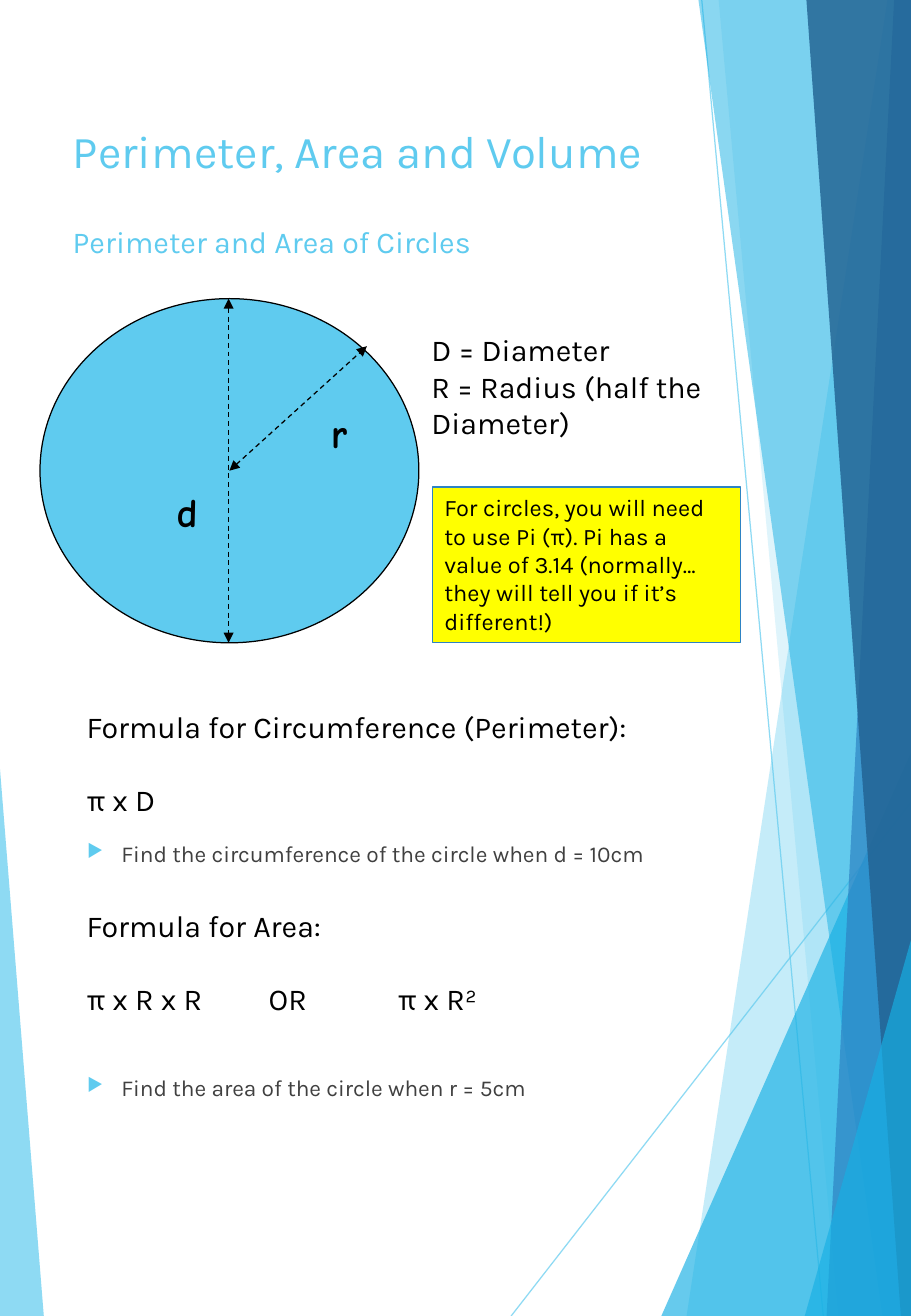
from dataclasses import dataclass

from lxml import etree
from pptx import Presentation
from pptx.dml.color import RGBColor
from pptx.enum import dml, shapes, text
from pptx.oxml.ns import qn
from pptx.util import Pt

WIDTH, HEIGHT = 540, 780
SKY = RGBColor(0x5F, 0xCB, 0xEF)
CYAN = RGBColor(0x17, 0xB0, 0xE4)
BLUE = RGBColor(0x2E, 0x83, 0xC3)
NAVY = RGBColor(0x22, 0x62, 0x92)
YELLOW = RGBColor(0xFF, 0xFF, 0x00)
BLACK = RGBColor(0x00, 0x00, 0x00)
GREY = RGBColor(0x40, 0x40, 0x40)
KARLA, COMIC = "Karla", "Comic Neue"
LINE_WIDTH = 0.75
BLANK_LINE = 21.6
BULLET_INDENT = 20.25

Point = tuple[float, float]
Box = tuple[float, float, float, float]


@dataclass
class Facet:
    points: list[Point]
    color: RGBColor
    opacity: int


@dataclass
class Label:
    box: Box
    lines: list[str]
    size: float = 18
    color: RGBColor = BLACK
    font: str = KARLA
    bold: bool = False
    centred: bool = False
    bullet: bool = False
    gap: float = 0
    tabs: tuple[float, ...] = ()


def band(top_x: float, bottom_x: float) -> list[Point]:
    """Outline from a slanted left side to the right edge of the slide."""
    return [(top_x, 0), (bottom_x, HEIGHT), (WIDTH, HEIGHT), (WIDTH, 0)]


def corner(left_x: float, top_y: float) -> list[Point]:
    """Triangle in the bottom right corner."""
    return [(left_x, HEIGHT), (WIDTH, top_y), (WIDTH, HEIGHT)]


LEFT_WEDGE = Facet([(0, 456.5), (26.5, HEIGHT), (0, HEIGHT)], SKY, 70)
RIGHT_FACETS = [
    Facet(band(526.3, 406.8), SKY, 36),
    Facet(band(425.5, 496.8), SKY, 20),
    Facet(corner(391.7, 445.7), CYAN, 66),
    Facet(band(414, 523.4), CYAN, 50),
    Facet(band(529.9, 489.6), BLUE, 70),
    Facet(band(478, 533.5), NAVY, 82),
    Facet(corner(476.6, 556.6), CYAN, 66),
]
SLANTED_LINES = [((303, HEIGHT), (WIDTH, 475.5)), ((416, 0), (488, HEIGHT))]

CENTRE_X, CENTRE_Y = 136, 279
CIRCLE_W, CIRCLE_H = 224.6, 204
DIAMETER = ((135.5, CENTRE_Y - CIRCLE_H / 2), (135.5, CENTRE_Y + CIRCLE_H / 2))
RADIUS = ((CENTRE_X, CENTRE_Y), (217.5, 205.2))

TITLE = Label((36, 69, 375, 150), ["Perimeter, Area and Volume"], 27, SKY)
LABELS = [
    Label((36, 129, 375, 150), ["Perimeter and Area of Circles"], 18, SKY),
    Label((187.2, 238.3, 27.4, 28), ["r"], 24, font=COMIC, bold=True, centred=True),
    Label((97.2, 285.1, 27.4, 28), ["d"], 24, font=COMIC, bold=True, centred=True),
    Label((248.6, 193, 193.7, 72.7),
          ["D = Diameter", "R = Radius (half the Diameter)"]),
    Label((44.2, 416.2, 366.5, 72.7),
          ["Formula for Circumference (Perimeter):", "π x D"], gap=BLANK_LINE),
    Label((44.2, 534.2, 366.5, 72.7),
          ["Formula for Area:", "π x R x R\tOR\tπ x R²"],
          gap=BLANK_LINE, tabs=(108, 184.5)),
    Label((44.6, 632.9, 368, 36.7),
          ["Find the area of the circle when r = 5cm"], 13.5, GREY, bullet=True),
    Label((44.6, 493.9, 368, 36.7),
          ["Find the circumference of the circle when d = 10cm"], 13.5, GREY,
          bullet=True),
]
PI_NOTE = Label((256.3, 288.7, 182.9, 92.2),
                ["For circles, you will need to use Pi (π). Pi has a value of 3.14 "
                 "(normally… they will tell you if it’s different!)"], 14)


def pts(values) -> list[Pt]:
    return [Pt(v) for v in values]


def set_opacity(fill_owner, percent: int) -> None:
    color = next(fill_owner.iter(qn("a:srgbClr")))
    etree.SubElement(color, qn("a:alpha"), val=str(percent * 1000))


def draw_facet(s, facet: Facet) -> None:
    builder = s.shapes.build_freeform(*facet.points[0], scale=Pt(1))
    builder.add_line_segments(facet.points[1:], close=True)
    sp = builder.convert_to_shape()
    sp.shadow.inherit = False
    sp.fill.solid()
    sp.fill.fore_color.rgb = facet.color
    sp.line.fill.background()
    set_opacity(sp.element.spPr, facet.opacity)


def draw_line(s, start: Point, end: Point, color: RGBColor):
    line = s.shapes.add_connector(shapes.MSO_CONNECTOR.STRAIGHT,
                                  *pts((*start, *end)))
    line.line.color.rgb = color
    line.line.width = Pt(LINE_WIDTH)
    etree.SubElement(line.element.spPr, qn("a:effectLst"))
    return line


def draw_measure(s, start: Point, end: Point) -> None:
    """Dashed line with an arrowhead at both ends."""
    line = draw_line(s, start, end, BLACK)
    line.line.dash_style = dml.MSO_LINE.DASH
    ln = line.element.spPr.find(qn("a:ln"))
    for end_tag in ("a:headEnd", "a:tailEnd"):
        etree.SubElement(ln, qn(end_tag), type="triangle")


def draw_filled(s, kind, box: Box, fill: RGBColor, outline: RGBColor):
    sp = s.shapes.add_shape(kind, *pts(box))
    sp.shadow.inherit = False
    sp.fill.solid()
    sp.fill.fore_color.rgb = fill
    sp.line.color.rgb = outline
    sp.line.width = Pt(LINE_WIDTH)
    return sp


def add_bullet(p) -> None:
    p.space_before = Pt(7.5)
    pPr = p._p.get_or_add_pPr()
    pPr.set("marL", str(Pt(BULLET_INDENT)))
    pPr.set("indent", str(-Pt(BULLET_INDENT)))
    color = etree.SubElement(pPr, qn("a:buClr"))
    etree.SubElement(color, qn("a:srgbClr"), val=str(SKY))
    etree.SubElement(pPr, qn("a:buSzPct"), val="80000")
    etree.SubElement(pPr, qn("a:buChar"), char="▶")


def add_tabs(p, stops: tuple[float, ...]) -> None:
    tabs = etree.SubElement(p._p.get_or_add_pPr(), qn("a:tabLst"))
    for stop in stops:
        etree.SubElement(tabs, qn("a:tab"), pos=str(Pt(stop)), algn="l")


def write(sp, label: Label) -> None:
    tf = sp.text_frame
    tf.word_wrap = True
    tf.auto_size = text.MSO_AUTO_SIZE.NONE
    tf.vertical_anchor = text.MSO_ANCHOR.TOP
    for i, line in enumerate(label.lines):
        p = tf.add_paragraph() if i else tf.paragraphs[0]
        p.alignment = text.PP_ALIGN.CENTER if label.centred else text.PP_ALIGN.LEFT
        if i and label.gap:
            p.space_before = Pt(label.gap)
        if label.bullet:
            add_bullet(p)
        if label.tabs:
            add_tabs(p, label.tabs)
        r = p.add_run()
        r.text = line
        r.font.name = label.font
        r.font.size = Pt(label.size)
        r.font.bold = label.bold
        r.font.color.rgb = label.color


def main() -> None:
    prs = Presentation()
    prs.slide_width, prs.slide_height = pts((WIDTH, HEIGHT))
    s = prs.slides.add_slide(prs.slide_layouts[5])

    draw_facet(s, LEFT_WEDGE)
    for start, end in SLANTED_LINES:
        set_opacity(draw_line(s, start, end, SKY).element.spPr, 70)
    for facet in RIGHT_FACETS:
        draw_facet(s, facet)

    title = s.shapes.title
    s.shapes.element.append(title.element)
    title.left, title.top, title.width, title.height = pts(TITLE.box)
    write(title, TITLE)

    circle_box = (CENTRE_X - CIRCLE_W / 2, CENTRE_Y - CIRCLE_H / 2, CIRCLE_W, CIRCLE_H)
    draw_filled(s, shapes.MSO_SHAPE.OVAL, circle_box, SKY, BLACK)
    for measure in (DIAMETER, RADIUS):
        draw_measure(s, *measure)
    for label in LABELS:
        write(s.shapes.add_textbox(*pts(label.box)), label)
    note = draw_filled(s, shapes.MSO_SHAPE.RECTANGLE, PI_NOTE.box, YELLOW, BLUE)
    write(note, PI_NOTE)
    prs.save("out.pptx")


if __name__ == "__main__":
    main()
